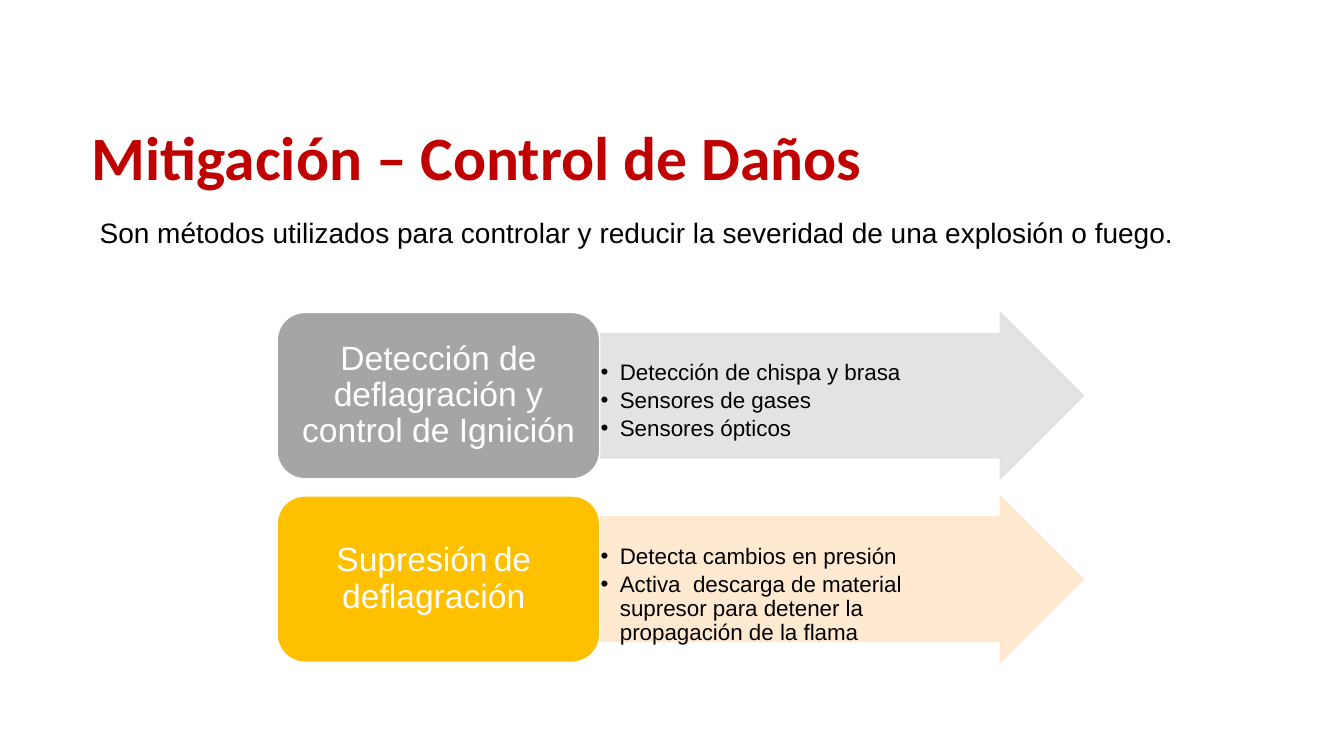
from lxml.etree import SubElement
from pptx import Presentation
from pptx.dml.color import RGBColor
from pptx.enum.shapes import MSO_SHAPE
from pptx.enum.text import MSO_ANCHOR, MSO_AUTO_SIZE, PP_ALIGN
from pptx.oxml.ns import qn
from pptx.util import Pt

COLORS = {
    "title": "C00000", "text": "000000", "white": "FFFFFF",
    "gray": "A5A5A5", "gray_light": "E1E1E1",
    "amber": "FFC000", "amber_light": "FFE7CB",
}

# Layout of the method rows
ROW_TOP, ROW_STEP, ROW_HEIGHT = 223.2, 131.04, 118.8
BOX_LEFT, BOX_WIDTH, ARROW_WIDTH = 198, 230.4, 345.6
INDENT = 13.68

# Heading runs (text, size), heading colour, arrow colour, bullets
METHODS = [
    ([("Detección de deflagración y control de Ignición", 24)],
     "gray", "gray_light",
     ["Detección de chispa y brasa", "Sensores de gases", "Sensores ópticos"]),
    ([("Supresión", 24), (" ", 16), ("de  deflagración ", 24)],
     "amber", "amber_light",
     ["Detecta cambios en presión",
      "Activa  descarga de material supresor para detener la propagación de la flama"]),
]


def rgb(name):
    return RGBColor.from_string(COLORS[name])


def set_attrs(target, values):
    for name, value in values.items():
        setattr(target, name, value)


def format_frame(tf, **values):
    set_attrs(tf, {"word_wrap": True, "auto_size": MSO_AUTO_SIZE.NONE, **values})


def add_run(p, text, size, color, font="Arial", bold=False):
    r = p.add_run()
    r.text = text
    set_attrs(r.font, {"size": Pt(size), "name": font, "bold": bold})
    r.font.color.rgb = rgb(color)


def add_shape(s, kind, left, top, width, fill, line):
    sp = s.shapes.add_shape(kind, Pt(left), Pt(top), Pt(width), Pt(ROW_HEIGHT))
    sp.shadow.inherit = False
    sp.fill.solid()
    sp.fill.fore_color.rgb = rgb(fill)
    sp.line.color.rgb = rgb(line)
    sp.line.width = Pt(1)
    return sp


def set_opacity(sp, percent):
    for color in sp._element.spPr.iter(qn("a:srgbClr")):
        SubElement(color, qn("a:alpha"), val=str(percent * 1000))


def add_bullet(p):
    pPr = p._p.get_or_add_pPr()
    pPr.set("marL", str(Pt(INDENT)))
    pPr.set("indent", str(-Pt(INDENT)))
    SubElement(pPr, qn("a:buFont"), typeface="Arial")
    SubElement(pPr, qn("a:buChar"), char="•")


def add_title(s, text):
    title = s.shapes.title
    set_attrs(title, {"left": Pt(58.3), "top": Pt(75.6),
                      "width": Pt(648), "height": Pt(77.8)})
    title.fill.solid()
    title.fill.fore_color.rgb = rgb("white")
    format_frame(title.text_frame, vertical_anchor=MSO_ANCHOR.MIDDLE)
    p = title.text_frame.paragraphs[0]
    set_attrs(p, {"alignment": PP_ALIGN.LEFT, "line_spacing": 0.9})
    add_run(p, text, 44, "title", "Calibri", True)


def add_intro(s, text):
    box = s.shapes.add_textbox(Pt(64.1), Pt(153.4), Pt(820.8), Pt(38.2))
    format_frame(box.text_frame)
    p = box.text_frame.paragraphs[0]
    p.line_spacing = 0.9
    add_run(p, text, 20, "text")


def add_arrow(s, top, color, bullets):
    sp = add_shape(s, MSO_SHAPE.RIGHT_ARROW, BOX_LEFT + BOX_WIDTH, top,
                   ARROW_WIDTH, color, color)
    sp.adjustments[0] = 0.75
    sp.adjustments[1] = 0.5
    set_opacity(sp, 90)
    tf = sp.text_frame
    format_frame(tf, vertical_anchor=MSO_ANCHOR.TOP, margin_left=Pt(0.72),
                 margin_top=Pt(20), margin_right=Pt(30), margin_bottom=Pt(0.72))
    for i, text in enumerate(bullets):
        p = tf.add_paragraph() if i else tf.paragraphs[0]
        add_bullet(p)
        set_attrs(p, {"alignment": PP_ALIGN.LEFT, "line_spacing": 0.9,
                      "space_after": Pt(2.75)})
        add_run(p, text, 16, "text")


def add_heading(s, top, color, runs):
    sp = add_shape(s, MSO_SHAPE.ROUNDED_RECTANGLE, BOX_LEFT, top,
                   BOX_WIDTH, color, "white")
    format_frame(sp.text_frame, vertical_anchor=MSO_ANCHOR.MIDDLE)
    p = sp.text_frame.paragraphs[0]
    set_attrs(p, {"alignment": PP_ALIGN.CENTER, "line_spacing": 0.9})
    for text, size in runs:
        add_run(p, text, size, "white")


def main():
    prs = Presentation()
    set_attrs(prs, {"slide_width": Pt(960), "slide_height": Pt(540)})
    s = prs.slides.add_slide(prs.slide_layouts.get_by_name("Title Only"))

    # Title and introduction
    add_title(s, "Mitigación – Control de Daños")
    add_intro(s, "Son métodos utilizados para controlar y reducir la severidad "
                 "de una explosión o fuego.")

    # One row per method
    for i, (runs, color, arrow_color, bullets) in enumerate(METHODS):
        top = ROW_TOP + i * ROW_STEP
        add_arrow(s, top, arrow_color, bullets)
        add_heading(s, top, color, runs)

    prs.save("out.pptx")


if __name__ == "__main__":
    main()
